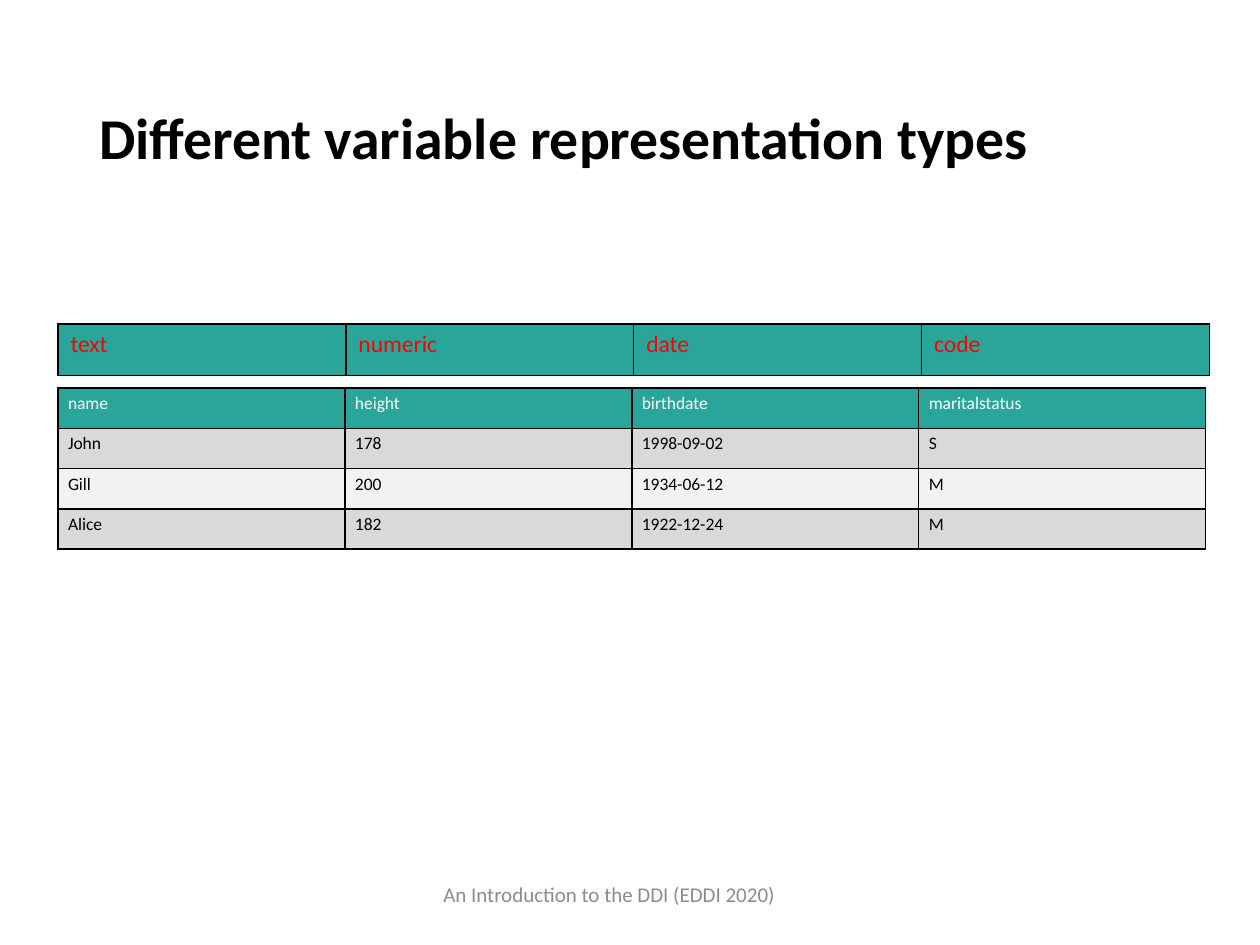
from lxml import etree
from pptx import Presentation
from pptx.dml.color import RGBColor
from pptx.enum.text import MSO_ANCHOR
from pptx.oxml.ns import qn
from pptx.util import Inches, Pt

MIDDLE, TOP = MSO_ANCHOR.MIDDLE, MSO_ANCHOR.TOP
TEAL, BLACK, WHITE, RED = "29A599", "000000", "FFFFFF", "FF0000"
DARK, LIGHT, GREY = "D9D9D9", "F2F2F2", "8C8C8C"
SIDES = ("a:lnL", "a:lnR", "a:lnT", "a:lnB")


def add_run(para, text, size, color, bold=False):
    run = para.add_run()
    run.text = text
    run.font.name = "Calibri"
    run.font.size = Pt(size)
    run.font.bold = bold
    run.font.color.rgb = RGBColor.from_string(color)


def style_cell(cell, fill, pad):
    """Set the fill, the margins and thin black borders of a cell."""
    cell.margin_left = cell.margin_right = Inches(pad)
    cell.margin_top = cell.margin_bottom = Inches(pad / 2)
    cell.fill.solid()
    cell.fill.fore_color.rgb = RGBColor.from_string(fill)
    props = cell._tc.get_or_add_tcPr()
    for spot, side in enumerate(SIDES):
        line = etree.Element(qn(side), w=str(Pt(1)))
        solid = etree.SubElement(line, qn("a:solidFill"))
        etree.SubElement(solid, qn("a:srgbClr"), val=BLACK)
        props.insert(spot, line)


deck = Presentation()
deck.slide_width, deck.slide_height = Inches(10), Inches(7.5)
slide = deck.slides.add_slide(deck.slide_layouts[6])

# Title and footer: place, anchor, line spacing, text, size, colour, bold
texts = [
    ((0.69, 0.39, 8.66, 1.45), MIDDLE, 0.9,
     "Different variable representation types", 33, BLACK, True),
    ((3.42, 6.95, 3.17, 0.4), TOP, 1.0,
     "An Introduction to the DDI (EDDI 2020)", 12, GREY, False),
]
for place, anchor, space, text, size, color, bold in texts:
    frame = slide.shapes.add_textbox(*map(Inches, place)).text_frame
    frame.word_wrap = True
    frame.vertical_anchor = anchor
    para = frame.paragraphs[0]
    para.line_spacing = space
    add_run(para, text, size, color, bold)

# Tables: top, width, row height, padding, text size, rows of (fill, colour, words)
tables = [
    (3.08, 9.11, 0.32, 0.08, 10, [
        (TEAL, WHITE, ("name", "height", "birthdate", "maritalstatus")),
        (DARK, BLACK, ("John", "178", "1998-09-02", "S")),
        (LIGHT, BLACK, ("Gill", "200", "1934-06-12", "M")),
        (DARK, BLACK, ("Alice", "182", "1922-12-24", "M")),
    ]),
    (2.57, 9.14, 0.41, 0.1, 13.5, [
        (TEAL, RED, ("text", "numeric", "date", "code")),
    ]),
]
for top, width, high, pad, size, rows in tables:
    table = slide.shapes.add_table(
        len(rows), 4, Inches(0.46), Inches(top),
        Inches(width), Inches(high * len(rows))).table
    for row, (fill, color, words) in zip(table.rows, rows):
        for cell, word in zip(row.cells, words):
            style_cell(cell, fill, pad)
            add_run(cell.text_frame.paragraphs[0], word, size, color)

deck.save("out.pptx")
